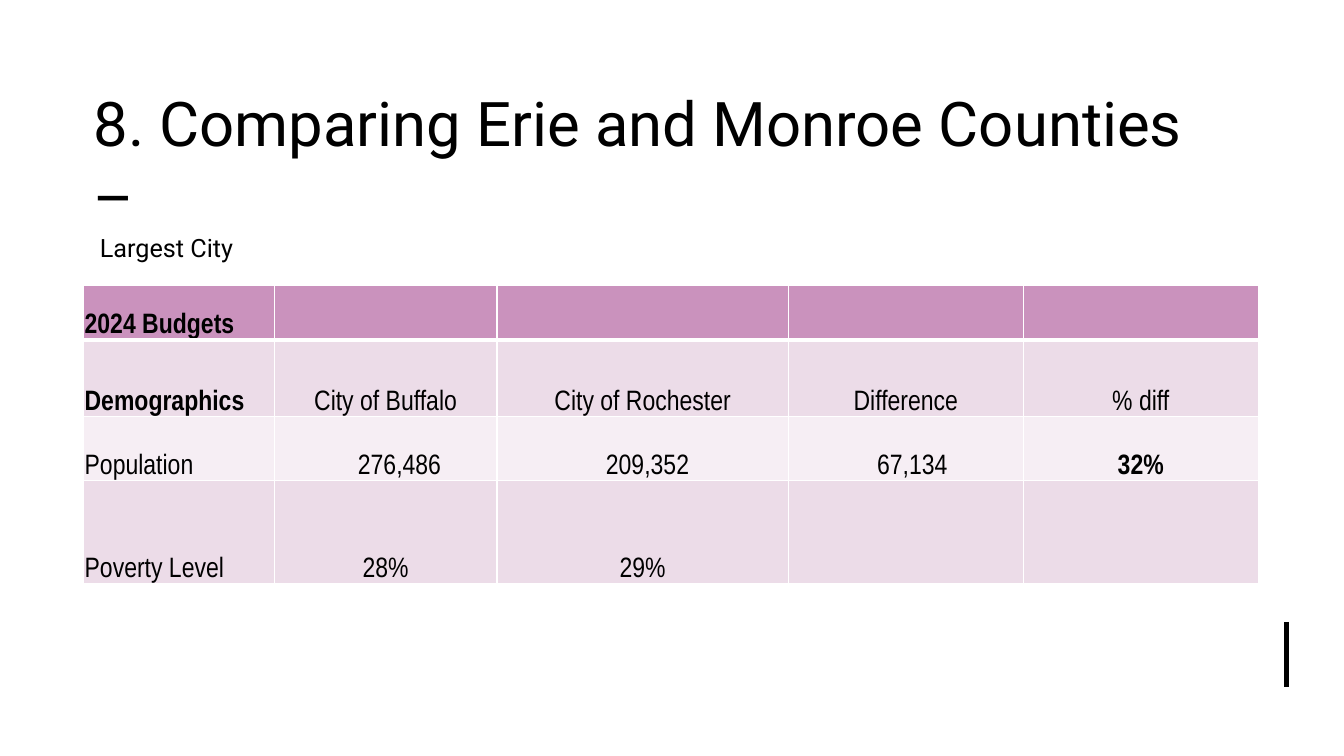
from lxml.etree import SubElement
from pptx import Presentation
from pptx.dml.color import RGBColor
from pptx.enum.shapes import MSO_CONNECTOR
from pptx.enum.text import MSO_ANCHOR, PP_ALIGN
from pptx.oxml.ns import qn
from pptx.util import Inches, Pt

COLOURS = {"ink": "000000", "rule": "FFFFFF", "header": "CA92BD",
           "dark_band": "ECDCE8", "light_band": "F6EEF4"}
COLUMN_WIDTHS = [1.89, 2.21, 2.89, 2.33, 2.33]
ROW_HEIGHTS = [0.54, 0.76, 0.64, 1.02]
ROW_FILLS = ["header", "dark_band", "light_band", "dark_band"]
BUDGET_ROWS = [
    ["2024 Budgets", "", "", "", ""],
    ["Demographics", "City of Buffalo", "City of Rochester", "Difference", "% diff"],
    ["Population", "276,486", "209,352", "67,134", "32%"],
    ["Poverty Level", "28%", "29%", "", ""],
]
BOLD_ENTRIES = {"2024 Budgets", "Demographics", "32%"}
FIGURE_INDENTS = {"276,486": 0.83, "209,352": 1.08, "67,134": 0.88}


def colour(key):
    """Return the named colour."""
    return RGBColor.from_string(COLOURS[key])


def format_run(run, font_name, size, bold=False):
    """Set the font of a run in ink colour."""
    run.font.name = font_name
    run.font.size = Pt(size)
    run.font.bold = bold
    run.font.color.rgb = colour("ink")


def add_heading(slide, left, top, width, height):
    """Place the title with the smaller subtitle below it."""
    heading = slide.shapes.add_textbox(
        Inches(left), Inches(top), Inches(width), Inches(height)).text_frame
    heading.word_wrap = True
    heading.vertical_anchor = MSO_ANCHOR.MIDDLE
    paragraph = heading.paragraphs[0]
    paragraph.text = "8. Comparing Erie and Monroe Counties – \v Largest City"
    for run, size in zip(paragraph.runs, (44, 18)):
        format_run(run, "Roboto", size)


def add_borders(cell, widths):
    """Draw the cell borders with a width in points for each side."""
    properties = cell._tc.get_or_add_tcPr()
    for side, width in widths.items():
        border = SubElement(properties, qn(f"a:ln{side}"), w=str(Pt(width)))
        fill = SubElement(border, qn("a:solidFill"))
        SubElement(fill, qn("a:srgbClr"), val=COLOURS["rule"])


def fill_entry(cell, entry, column):
    """Write one table entry at the bottom of its cell."""
    cell.vertical_anchor = MSO_ANCHOR.BOTTOM
    cell.margin_left = Inches(FIGURE_INDENTS.get(entry, 0.01))
    cell.margin_right = cell.margin_top = Inches(0.01)
    cell.margin_bottom = 0
    paragraph = cell.text_frame.paragraphs[0]
    paragraph.text = entry
    centred = column > 0 and entry not in FIGURE_INDENTS
    paragraph.alignment = PP_ALIGN.CENTER if centred else PP_ALIGN.LEFT
    format_run(paragraph.runs[0], "Arial Narrow", 20, entry in BOLD_ENTRIES)


def add_budget_table(slide, left, top, width, height):
    """Place the table comparing the two cities."""
    budgets = slide.shapes.add_table(
        len(ROW_HEIGHTS), len(COLUMN_WIDTHS),
        Inches(left), Inches(top), Inches(width), Inches(height)).table
    for column, column_width in zip(budgets.columns, COLUMN_WIDTHS):
        column.width = Inches(column_width)
    for row, row_height in zip(budgets.rows, ROW_HEIGHTS):
        row.height = Inches(row_height)
    for row_index, entries in enumerate(BUDGET_ROWS):
        for column_index, entry in enumerate(entries):
            cell = budgets.cell(row_index, column_index)
            add_borders(cell, {"L": 1, "R": 1, "T": 3 if row_index == 1 else 1,
                               "B": 3 if row_index == 0 else 1})
            cell.fill.solid()
            cell.fill.fore_color.rgb = colour(ROW_FILLS[row_index])
            if entry:
                fill_entry(cell, entry, column_index)


def add_corner_rule(slide, left, top, height):
    """Place the short upright rule near the lower right corner."""
    corner_rule = slide.shapes.add_connector(
        MSO_CONNECTOR.STRAIGHT, Inches(left), Inches(top),
        Inches(left), Inches(top + height))
    corner_rule.line.color.rgb = colour("ink")
    corner_rule.line.width = Pt(3)
    SubElement(corner_rule._element.spPr, qn("a:effectLst"))


def main():
    """Build and save the slide."""
    presentation = Presentation()
    presentation.slide_width = Inches(13.33)
    presentation.slide_height = Inches(7.5)
    slide = presentation.slides.add_slide(presentation.slide_layouts[6])
    add_corner_rule(slide, 12.76, 6.17, 0.65)
    add_heading(slide, 0.83, 0.94, 11.35, 1.57)
    add_budget_table(slide, 0.83, 2.83, sum(COLUMN_WIDTHS), sum(ROW_HEIGHTS))
    presentation.save("out.pptx")


if __name__ == "__main__":
    main()
